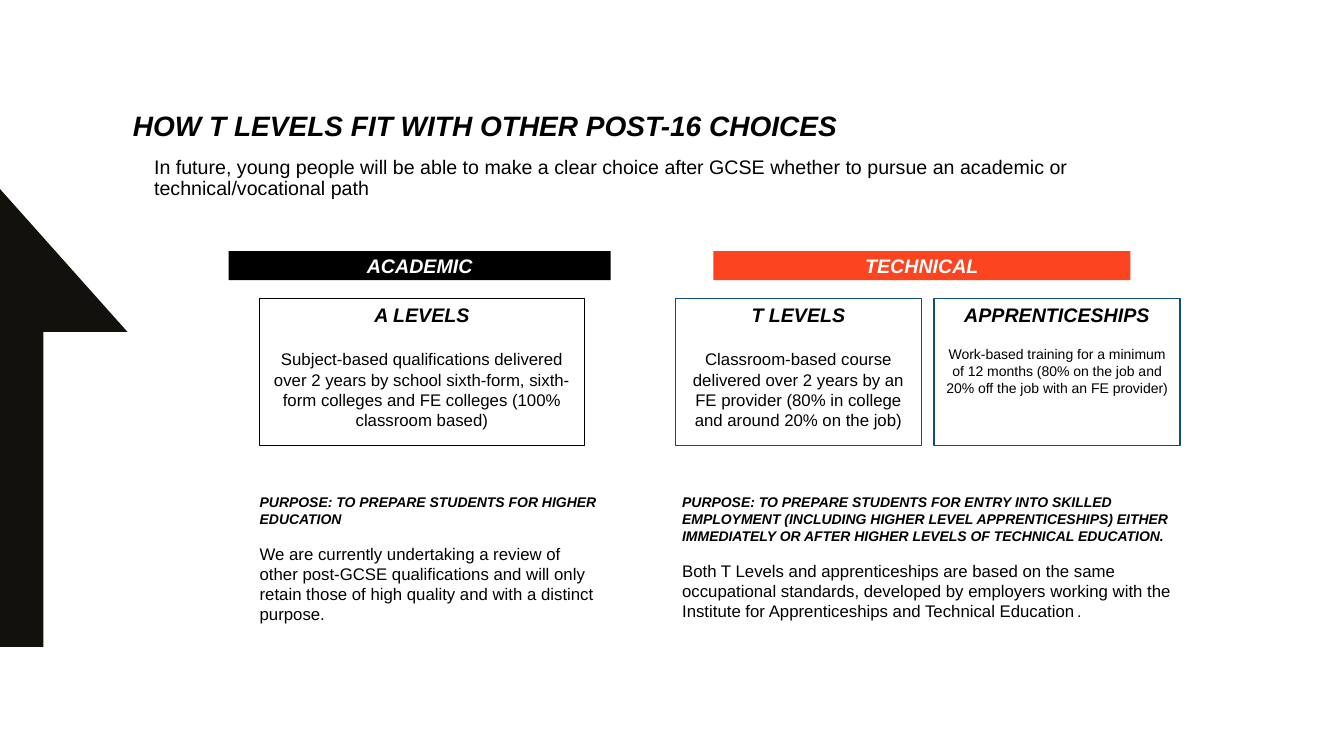
from pptx import Presentation
from pptx.dml.color import RGBColor
from pptx.enum.shapes import MSO_SHAPE as SHAPE
from pptx.enum.text import MSO_ANCHOR as ANCHOR, PP_ALIGN as ALIGN
from pptx.util import Pt

BLACK = RGBColor(0x00, 0x00, 0x00)
WHITE = RGBColor(0xFF, 0xFF, 0xFF)
INK = RGBColor(0x12, 0x11, 0x0C)
ORANGE = RGBColor(0xFC, 0x44, 0x20)
BLUE = RGBColor(0x10, 0x4F, 0x75)

HEADING = dict(size=Pt(14), bold=True, italic=True)
PURPOSE = dict(size=Pt(10), bold=True, italic=True)
BODY = dict(size=Pt(12))
SMALL = dict(size=Pt(10))
MONO = dict(size=Pt(10), name="Noto Sans Mono")


def add_run(p, text, color=BLACK, **formats):
    """Append a formatted run to a paragraph."""
    r = p.add_run()
    r.text = text
    for key, value in {"name": "Arial", **formats}.items():
        setattr(r.font, key, value)
    r.font.color.rgb = color


def add_text(s, left, top, width, height, inset=(7.2, 3.6), anchor=ANCHOR.TOP):
    """Add a wrapping text box and return its text frame."""
    tf = s.shapes.add_textbox(Pt(left), Pt(top), Pt(width), Pt(height)).text_frame
    across, down = map(Pt, inset)
    frame = dict(word_wrap=True, vertical_anchor=anchor, margin_left=across,
                 margin_right=across, margin_top=down, margin_bottom=down)
    for key, value in frame.items():
        setattr(tf, key, value)
    return tf


def add_line(s, text, box, spacing, formats, **frame):
    """Add a text box with a single paragraph."""
    p = add_text(s, *box, **frame).paragraphs[0]
    p.line_spacing = spacing
    add_run(p, text, **formats)


def add_rect(s, left, top, width, height, fill, line=None):
    """Add a flat rectangle and return its text frame."""
    sp = s.shapes.add_shape(SHAPE.RECTANGLE, Pt(left), Pt(top), Pt(width), Pt(height))
    sp.shadow.inherit = False
    sp.fill.solid()
    sp.fill.fore_color.rgb = fill
    if line is None:
        sp.line.fill.background()
    else:
        sp.line.color.rgb = line
        sp.line.width = Pt(1)
    sp.text_frame.word_wrap = True
    return sp.text_frame


def fill_pair(tf, head, head_format, body, body_format, gap, align):
    """Write a heading and a body paragraph, and return the latter."""
    p = tf.paragraphs[0]
    add_run(p, head, **head_format)
    p.alignment = align
    p = tf.add_paragraph()
    p.alignment = align
    p.space_before = Pt(gap)
    add_run(p, body, **body_format)
    return p


def add_banner(s, text, left, width, fill):
    """Add a coloured path banner."""
    tf = add_rect(s, left, 179.3, width, 20.9, fill)
    tf.vertical_anchor = ANCHOR.MIDDLE
    p = tf.paragraphs[0]
    p.alignment = ALIGN.CENTER
    add_run(p, text, WHITE, **HEADING)


def add_card(s, head, body, left, width, line, body_format=BODY, gap=16):
    """Add an outlined qualification card."""
    tf = add_rect(s, left, 213.1, width, 105.1, WHITE, line)
    tf.vertical_anchor = ANCHOR.TOP
    fill_pair(tf, head, HEADING, body, body_format, gap, ALIGN.CENTER)


def add_purpose(s, head, body, left, width, height):
    """Add a purpose note and return its last paragraph."""
    tf = add_text(s, left, 349.2, width, height)
    return fill_pair(tf, head, PURPOSE, body, BODY, 11.5, ALIGN.LEFT)


def add_arrow(s):
    """Add the dark half arrow at the left edge."""
    builder = s.shapes.build_freeform(0, 134.8, scale=Pt(1))
    builder.add_line_segments([(0, 462.1), (31.2, 462.1), (31.2, 236.7), (90.7, 236.7)])
    sp = builder.convert_to_shape()
    sp.shadow.inherit = False
    sp.fill.solid()
    sp.fill.fore_color.rgb = INK
    sp.line.fill.background()


def main():
    """Build and save the slide."""
    prs = Presentation()
    prs.slide_width, prs.slide_height = Pt(960), Pt(540)
    s = prs.slides.add_slide(prs.slide_layouts[6])
    add_arrow(s)
    add_line(s, "HOW T LEVELS FIT WITH OTHER POST-16 CHOICES", (95, 82.1, 770.4, 39.6),
             0.8, {**HEADING, "size": Pt(20)}, inset=(0, 0))
    add_line(s, "In future, young people will be able to make a clear choice after GCSE "
             "whether to pursue an academic or technical/vocational path",
             (105.8, 110.9, 712.8, 33.8), 0.9, dict(size=Pt(14)),
             inset=(4.3, 2.2), anchor=ANCHOR.MIDDLE)
    add_banner(s, "ACADEMIC", 163.4, 272.9, BLACK)
    add_banner(s, "TECHNICAL", 509.6, 297.8, ORANGE)
    add_card(s, "A LEVELS", "Subject-based qualifications delivered over 2 years by school "
             "sixth-form, sixth-form colleges and FE colleges (100% classroom based)",
             185.2, 232.4, BLACK)
    add_card(s, "T LEVELS", "Classroom-based course delivered over 2 years by an FE provider "
             "(80% in college and around 20% on the job)", 482.5, 175.7, BLUE)
    add_card(s, "APPRENTICESHIPS", "Work-based training for a minimum of 12 months "
             "(80% on the job and 20% off the job with an FE provider)",
             667.2, 175.7, BLUE, SMALL, 13.5)
    add_purpose(s, "PURPOSE: TO PREPARE STUDENTS FOR HIGHER EDUCATION",
                "We are currently undertaking a review of other post-GCSE qualifications and "
                "will only retain those of high quality and with a distinct purpose.",
                178.4, 254.9, 118.8)
    p = add_purpose(s, "PURPOSE: TO PREPARE STUDENTS FOR ENTRY INTO SKILLED EMPLOYMENT "
                    "(INCLUDING HIGHER LEVEL APPRENTICESHIPS) EITHER IMMEDIATELY OR AFTER "
                    "HIGHER LEVELS OF TECHNICAL EDUCATION.",
                    "Both T Levels and apprenticeships are based on the same occupational "
                    "standards, developed by employers working with the Institute for "
                    "Apprenticeships and Technical Education", 480.2, 391.7, 99.4)
    add_run(p, ".", **MONO)
    prs.save("out.pptx")


if __name__ == "__main__":
    main()
